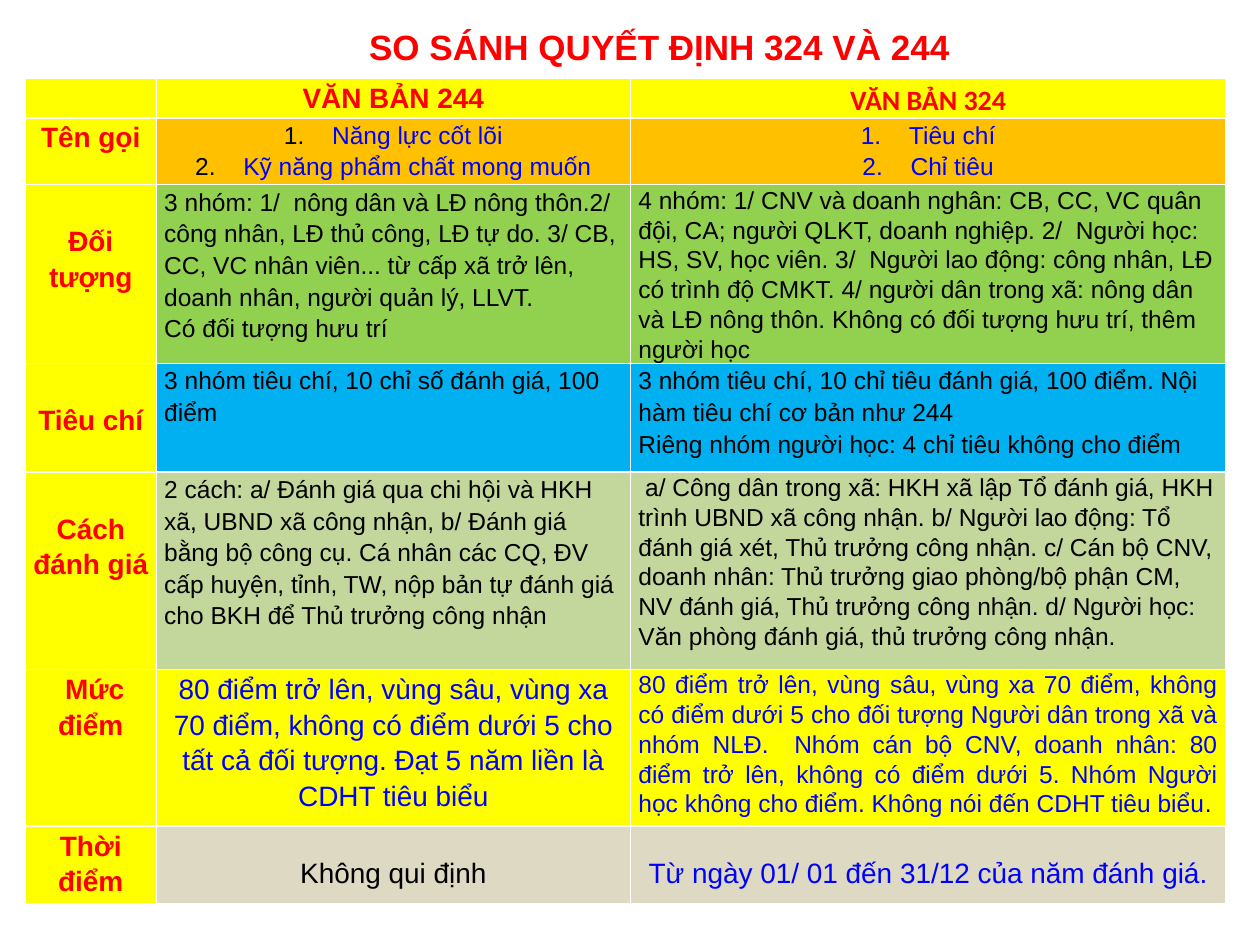
from lxml.etree import SubElement
from pptx import Presentation
from pptx.dml.color import RGBColor
from pptx.enum.text import PP_ALIGN as Align
from pptx.oxml.ns import qn
from pptx.util import Cm, Pt

RED = RGBColor(0xFF, 0x00, 0x00)
BLUE = RGBColor(0x00, 0x00, 0xFF)
BLACK = RGBColor(0x00, 0x00, 0x00)
YELLOW = RGBColor(0xFF, 0xFF, 0x00)
ORANGE = RGBColor(0xFF, 0xC0, 0x00)
GREEN = RGBColor(0x92, 0xD0, 0x50)
SKY = RGBColor(0x00, 0xB0, 0xF0)
SAGE = RGBColor(0xC3, 0xD6, 0x9B)
SAND = RGBColor(0xDD, 0xD9, 0xC3)

# Text styles: font values, paragraph values, and extras
LOOSE = {"alignment": Align.LEFT, "line_spacing": 1.15}
CENTRED = {"alignment": Align.CENTER, "line_spacing": 1.15}
TIGHT = {"alignment": Align.LEFT, "line_spacing": Pt(17),
         "space_before": Pt(3), "space_after": Pt(3)}


def style(size, color, para, bold=False, name="Arial", **extras):
    font = {"size": Pt(size), "bold": bold, "name": name}
    return {"font": font, "color": color, "para": para, **extras}


TITLE = style(20, RED, {"alignment": Align.CENTER}, bold=True)
HEAD = style(16, RED, CENTRED, bold=True)
HEAD_ALT = style(16, RED, CENTRED, bold=True, name="Calibri")
LOW_HEAD = {**HEAD, "top": Cm(0.75)}
LIST_BLACK = style(14, BLUE, CENTRED, number=BLACK)
LIST_BLUE = style(14, BLUE, CENTRED, number=BLUE)
BODY = style(14, BLACK, LOOSE)
DENSE = style(14, BLACK, TIGHT)
SCORE = style(16, BLUE, CENTRED)
SCORE_DENSE = style(14, BLUE, {**TIGHT, "alignment": Align.JUSTIFY})
TERM = style(16, BLACK, CENTRED, top=Cm(0.55))
TERM_BLUE = {**TERM, "color": BLUE}

COLUMN_WIDTHS = [2.64, 9.56, 12.0]

# Each row: height, fill of the two text columns, cells as (style, paragraphs).
# A paragraph is a string, or a list of (text, colour) pieces.
ROWS = [
    (0.77, YELLOW, [
        (HEAD, [""]),
        (HEAD, ["VĂN BẢN 244"]),
        (HEAD_ALT, ["VĂN BẢN 324"])]),
    (1.35, ORANGE, [
        (HEAD, ["Tên gọi"]),
        (LIST_BLACK, ["Năng lực cốt lõi", "Kỹ năng phẩm chất mong muốn"]),
        (LIST_BLUE, ["Tiêu chí", "Chỉ tiêu"])]),
    (3.6, GREEN, [
        (LOW_HEAD, ["Đối tượng"]),
        (BODY, ["3 nhóm: 1/  nông dân và LĐ nông thôn.2/ công nhân, LĐ thủ công, "
                "LĐ tự do. 3/ CB, CC, VC nhân viên... từ cấp xã trở lên, "
                "doanh nhân, người quản lý, LLVT.",
                "Có đối tượng hưu trí"]),
        (DENSE, ["4 nhóm: 1/ CNV và doanh nghân: CB, CC, VC quân đội, CA; người "
                 "QLKT, doanh nghiệp. 2/  Người học:  HS, SV, học viên. "
                 "3/  Người lao động: công nhân, LĐ có trình độ CMKT. 4/ người dân "
                 "trong xã: nông dân và LĐ nông thôn. Không có đối tượng hưu trí, "
                 "thêm người học"])]),
    (2.19, SKY, [
        (LOW_HEAD, ["Tiêu chí"]),
        (BODY, ["3 nhóm tiêu chí, 10 chỉ số đánh giá, 100 điểm"]),
        (BODY, ["3 nhóm tiêu chí, 10 chỉ tiêu đánh giá, 100 điểm. "
                "Nội hàm tiêu chí cơ bản như 244",
                "Riêng nhóm người học: 4 chỉ tiêu không cho điểm"])]),
    (3.98, SAGE, [
        (LOW_HEAD, ["Cách đánh giá"]),
        (BODY, ["2 cách: a/ Đánh giá qua chi hội và HKH xã, UBND xã công nhận, "
                "b/ Đánh giá bằng bộ công cụ. Cá nhân các CQ, ĐV cấp huyện, tỉnh, "
                "TW, nộp bản tự đánh giá cho BKH để Thủ trưởng công nhận"]),
        (DENSE, [" a/ Công dân trong xã: HKH xã lập Tổ đánh giá, HKH trình UBND xã "
                 "công nhận. b/ Người lao động: Tổ đánh giá xét, Thủ trưởng công "
                 "nhận. c/ Cán bộ CNV, doanh nhân: Thủ trưởng giao phòng/bộ phận "
                 "CM, NV đánh giá, Thủ trưởng công nhận. d/ Người học: Văn phòng "
                 "đánh giá, thủ trưởng công nhận."])]),
    (3.16, YELLOW, [
        (HEAD, [" Mức điểm"]),
        (SCORE, ["80 điểm trở lên, vùng sâu, vùng xa 70 điểm, không có điểm dưới 5 "
                 "cho tất cả đối tượng. Đạt 5 năm liền là CDHT tiêu biểu"]),
        (SCORE_DENSE, [[
            ("80 điểm trở lên, vùng sâu, vùng xa 70 điểm, không có điểm dưới 5 cho "
             "đối tượng Người dân trong xã và nhóm NLĐ.  Nhóm cán bộ CNV, doanh "
             "nhân: 80 điểm trở lên, không có điểm dưới 5. Nhóm Người học không "
             "cho điểm. Không nói đến CDHT tiêu biểu", BLUE),
            (".", BLACK)]])]),
    (1.56, SAND, [
        (HEAD, ["Thời điểm"]),
        (TERM, ["Không qui định"]),
        (TERM_BLUE, ["Từ ngày 01/ 01 đến 31/12 của năm đánh giá."])]),
]


def set_values(target, values):
    for name, value in values.items():
        setattr(target, name, value)


class SlideWriter:
    """Holds the current slide and its shared cell margins."""

    margins = {"margin_left": Cm(0.16), "margin_right": Cm(0.16),
               "margin_top": 0, "margin_bottom": 0}

    def __init__(self, page):
        self.page = page

    def text(self, frame, look, paragraphs):
        for index, pieces in enumerate(paragraphs):
            para = frame.paragraphs[0] if index == 0 else frame.add_paragraph()
            set_values(para, look["para"])
            if "number" in look:
                self.number(para, look["number"])
            if isinstance(pieces, str):
                pieces = [(pieces, look["color"])]
            for words, color in pieces:
                span = para.add_run()
                span.text = words
                set_values(span.font, look["font"])
                span.font.color.rgb = color

    def number(self, para, color):
        props = para._p.get_or_add_pPr()
        props.set("marL", str(Cm(0.97)))
        props.set("indent", str(-Cm(0.97)))
        holder = SubElement(props, qn("a:buClr"))
        SubElement(holder, qn("a:srgbClr"), val=str(color))
        SubElement(props, qn("a:buFont"), typeface="+mj-lt")
        SubElement(props, qn("a:buAutoNum"), type="arabicPeriod")

    def title(self, words, left, top, width, height):
        box = self.page.shapes.add_textbox(Cm(left), Cm(top), Cm(width), Cm(height))
        box.text_frame.word_wrap = True
        self.text(box.text_frame, TITLE, [words])

    def table(self, left, top, widths, rows):
        height = sum(row[0] for row in rows)
        grid = self.page.shapes.add_table(
            len(rows), len(widths), Cm(left), Cm(top),
            Cm(sum(widths)), Cm(height)).table
        grid.horz_banding = False
        for column, width in zip(grid.columns, widths):
            column.width = Cm(width)
        for row, (height, fill, cells) in zip(grid.rows, rows):
            row.height = Cm(height)
            for index, (look, paragraphs) in enumerate(cells):
                self.cell(row.cells[index], fill if index else YELLOW,
                          look, paragraphs)

    def cell(self, cell, fill, look, paragraphs):
        set_values(cell, self.margins)
        cell.margin_top = look.get("top", 0)
        cell.fill.solid()
        cell.fill.fore_color.rgb = fill
        self.text(cell.text_frame, look, paragraphs)


def main():
    deck = Presentation()
    deck.slide_width, deck.slide_height = Cm(25.4), Cm(19.05)
    writer = SlideWriter(deck.slides.add_slide(deck.slide_layouts[6]))

    # Comparison table
    writer.table(0.51, 1.58, COLUMN_WIDTHS, ROWS)

    # Heading
    writer.title("SO SÁNH QUYẾT ĐỊNH 324 VÀ 244", 2.69, 0.38, 21.21, 1.12)

    deck.save("out.pptx")


if __name__ == "__main__":
    main()
